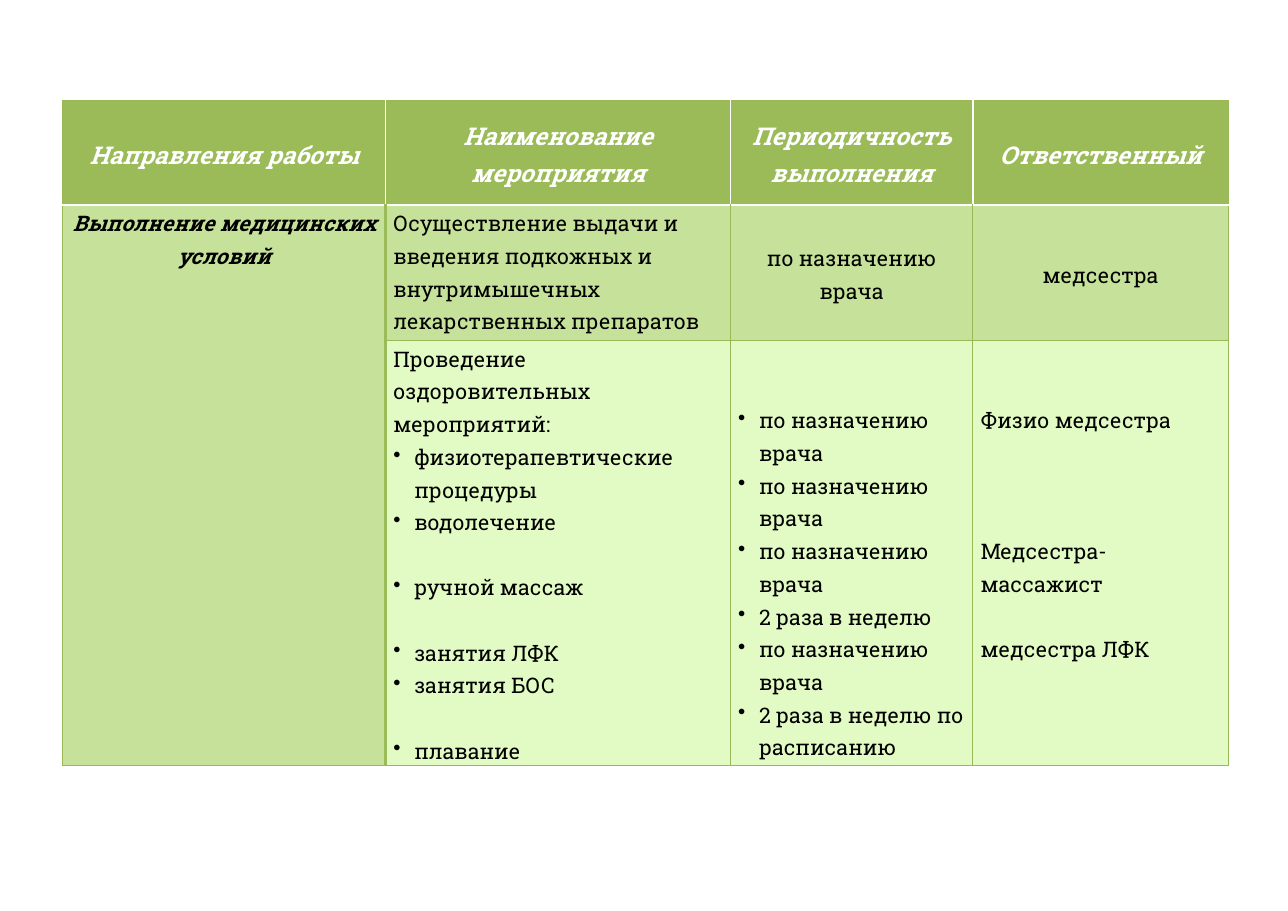
import pptx
import pptx.dml.color
import pptx.enum.text
import pptx.oxml
import pptx.oxml.ns
import pptx.util
from pptx.util import Inches

RGBColor = pptx.dml.color.RGBColor
ALIGN = pptx.enum.text.PP_ALIGN
ANCHOR = pptx.enum.text.MSO_ANCHOR

WHITE = RGBColor(0xFF, 0xFF, 0xFF)
BLACK = RGBColor(0, 0, 0)
GREEN = RGBColor(0x9B, 0xBB, 0x59)
EDGE = RGBColor(0x98, 0xB9, 0x55)
MIDDLE = RGBColor(0xC6, 0xE1, 0x99)
LIGHT = RGBColor(0xE2, 0xFA, 0xC3)
LINE_STEP = 21.3  # points taken by one line of body text

HEADER = {"size": pptx.util.Pt(16), "bold": True, "italic": True}
TOPIC = {"size": pptx.util.Pt(14), "bold": True, "italic": True}
BODY = {"size": pptx.util.Pt(14), "bold": False, "italic": False}

headings = ["Направления работы", "Наименование мероприятия",
            "Периодичность выполнения", "Ответственный"]
injections = "Осуществление выдачи и введения подкожных и внутримышечных лекарственных препаратов"
by_doctor = "по назначению врача"

# Each paragraph: text, lines left free above it, bulleted or not
procedures = [("Проведение оздоровительных мероприятий:", 0, False),
              ("физиотерапевтические процедуры", 0, True), ("водолечение", 0, True),
              ("ручной массаж", 1, True), ("занятия ЛФК", 1, True),
              ("занятия БОС", 0, True), ("плавание", 1, True)]
schedule = [(text, 0, True) for text in
            [by_doctor] * 3 + ["2 раза в неделю", by_doctor, "2 раза в неделю по расписанию"]]
staff = [("Физио медсестра", 0, False), ("Медсестра-массажист", 3, False),
         ("медсестра ЛФК", 1, False)]


def set_border(cell, side, color, width):
    cell._tc.get_or_add_tcPr().append(pptx.oxml.parse_xml(
        f'<a:ln{side} {pptx.oxml.ns.nsdecls("a")} w="{pptx.util.Pt(width)}">'
        f'<a:solidFill><a:srgbClr val="{color}"/></a:solidFill></a:ln{side}>'))


def write_cell(cell, paragraphs, font, color, align, anchor, side=0.07, top=0):
    cell.vertical_anchor = anchor
    cell.margin_left = cell.margin_right = Inches(side)
    cell.margin_top, cell.margin_bottom = Inches(top), 0
    for index, (text, free_lines, bulleted) in enumerate(paragraphs):
        frame = cell.text_frame
        para = frame.add_paragraph() if index else frame.paragraphs[0]
        if bulleted:
            props = para._p.get_or_add_pPr()
            props.set("marL", str(Inches(0.19)))
            props.set("indent", str(Inches(-0.19)))
            props.append(pptx.oxml.parse_xml(
                f'<a:buChar {pptx.oxml.ns.nsdecls("a")} char="•"/>'))
        para.alignment = align
        para.line_spacing = 1.15
        if free_lines:
            para.space_before = pptx.util.Pt(free_lines * LINE_STEP)
        span = para.add_run()
        span.text = text
        span.font.name = "Roboto Slab"
        span.font.color.rgb = color
        for name, value in font.items():
            setattr(span.font, name, value)


deck = pptx.Presentation()
deck.slide_width, deck.slide_height = Inches(11.69), Inches(8.27)
page = deck.slides.add_slide(deck.slide_layouts[6])

plan = page.shapes.add_table(3, 4, Inches(0.57), Inches(0.91),
                             Inches(10.59), Inches(5.98)).table
plan.first_row = plan.horz_banding = False
for column, width in zip(plan.columns, [2.93, 3.13, 2.2, 2.32]):
    column.width = Inches(width)
for row, height in zip(plan.rows, [0.95, 1.23, 3.81]):
    row.height = Inches(height)

for r in range(3):
    for c in range(4):
        cell = plan.cell(r, c)
        borders = {side: (EDGE, 0.75) for side in "LRTB"}
        if r == 0:
            borders["B"] = (WHITE, 2)
            if c > 0:
                borders["L"] = (WHITE, 1)
            if c < 3:
                borders["R"] = (WHITE, 1)
        elif c == 0:
            borders["R"] = (GREEN, 2)
        elif c == 1:
            borders["L"] = (GREEN, 2)
        if r == 1 and c > 0:
            borders["T"] = (WHITE, 2)
        for side, (color, width) in borders.items():
            set_border(cell, side, color, width)
        cell.fill.solid()
        cell.fill.fore_color.rgb = GREEN if r == 0 else MIDDLE if r == 1 or c == 0 else LIGHT
plan.cell(1, 0).merge(plan.cell(2, 0))

for c, heading in enumerate(headings):
    write_cell(plan.cell(0, c), [(heading, 0, False)], HEADER, WHITE,
               ALIGN.CENTER, ANCHOR.MIDDLE, side=0.02)
write_cell(plan.cell(1, 0), [("Выполнение медицинских условий", 0, False)], TOPIC, BLACK,
           ALIGN.CENTER, ANCHOR.TOP)
write_cell(plan.cell(1, 1), [(injections, 0, False)], BODY, BLACK, ALIGN.LEFT, ANCHOR.TOP)
for c, text in [(2, by_doctor), (3, "медсестра")]:
    write_cell(plan.cell(1, c), [(text, 0, False)], BODY, BLACK, ALIGN.CENTER, ANCHOR.MIDDLE)
for c, paragraphs, align, top in [(1, procedures, ALIGN.LEFT, 0),
                                  (2, schedule, ALIGN.LEFT, 0.56),
                                  (3, staff, ALIGN.JUSTIFY, 0.56)]:
    write_cell(plan.cell(2, c), paragraphs, BODY, BLACK, align, ANCHOR.TOP, top=top)

deck.save("out.pptx")
